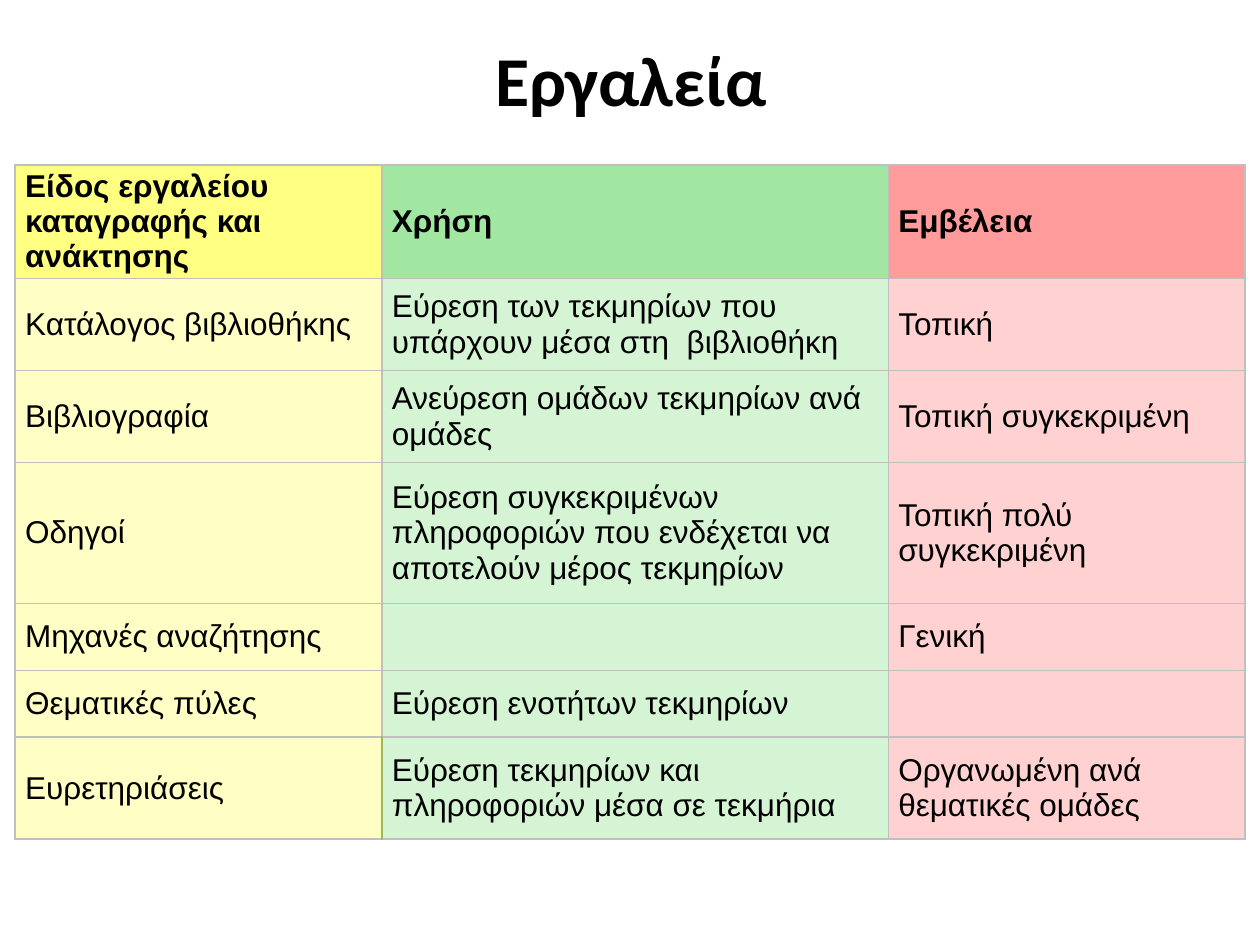
import pptx
import pptx.dml.color
import pptx.enum.text
import pptx.oxml
import pptx.oxml.ns
import pptx.util

MIDDLE = pptx.enum.text.MSO_ANCHOR.MIDDLE
CENTER = pptx.enum.text.PP_ALIGN.CENTER
LEFT = pptx.enum.text.PP_ALIGN.LEFT
GREY, OLIVE = "BFBFBF", "9BBB59"
HEADER_FILLS = ["FFFF81", "A1E7A1", "FF9B9B"]
BODY_FILLS = ["FFFFC5", "D4F4D4", "FFD1D1"]
COLUMN_WIDTHS = [2.91, 4.02, 2.83]
ROW_HEIGHTS = [0.73, 0.73, 0.73, 1.12, 0.53, 0.53, 0.81]
TOOLS = [
    ["Είδος εργαλείου καταγραφής και ανάκτησης", "Χρήση", "Εμβέλεια"],
    ["Κατάλογος βιβλιοθήκης", "Εύρεση των τεκμηρίων που υπάρχουν μέσα στη  βιβλιοθήκη", "Τοπική"],
    ["Βιβλιογραφία", "Ανεύρεση ομάδων τεκμηρίων ανά ομάδες", "Τοπική συγκεκριμένη"],
    ["Οδηγοί", "Εύρεση συγκεκριμένων πληροφοριών που ενδέχεται να αποτελούν μέρος τεκμηρίων",
     "Τοπική πολύ συγκεκριμένη"],
    ["Μηχανές αναζήτησης", "", "Γενική"],
    ["Θεματικές πύλες", "Εύρεση ενοτήτων τεκμηρίων", ""],
    ["Ευρετηριάσεις", "Εύρεση τεκμηρίων και πληροφοριών μέσα σε τεκμήρια", "Οργανωμένη ανά θεματικές ομάδες"],
]


def color(value):
    return pptx.dml.color.RGBColor.from_string(value)


def write(paragraph, text, alignment, **formats):
    paragraph.alignment = alignment
    if text:
        paragraph.add_run().text = text
    for font in [paragraph.font] + [run.font for run in paragraph.runs]:
        for name, value in formats.items():
            setattr(font, name, value)
        font.color.rgb = color("000000")


presentation = pptx.Presentation()
presentation.slide_width = pptx.util.Inches(10)
presentation.slide_height = pptx.util.Inches(7.5)
slide = presentation.slides.add_slide(presentation.slide_layouts[6])

title = slide.shapes.add_textbox(*map(pptx.util.Inches, (0.51, 0.13, 9, 0.99)))
title.text_frame.word_wrap = True
title.text_frame.vertical_anchor = MIDDLE
write(title.text_frame.paragraphs[0], "Εργαλεία", CENTER,
      name="Calibri", size=pptx.util.Pt(40), bold=True)

table = slide.shapes.add_table(
    len(ROW_HEIGHTS), len(COLUMN_WIDTHS),
    *map(pptx.util.Inches, (0.12, 1.31, sum(COLUMN_WIDTHS), sum(ROW_HEIGHTS)))).table
table.horz_banding = False
for column, width in zip(table.columns, COLUMN_WIDTHS):
    column.width = pptx.util.Inches(width)
for row, height in zip(table.rows, ROW_HEIGHTS):
    row.height = pptx.util.Inches(height)

cell_formats = {
    "vertical_anchor": MIDDLE,
    "margin_left": pptx.util.Inches(0.08),
    "margin_right": pptx.util.Inches(0.08),
    "margin_top": 0,
    "margin_bottom": 0,
}
last_row = len(TOOLS) - 1
for row_index, texts in enumerate(TOOLS):
    header = row_index == 0
    fills = HEADER_FILLS if header else BODY_FILLS
    for column_index, text in enumerate(texts):
        cell = table.cell(row_index, column_index)
        for name, value in cell_formats.items():
            setattr(cell, name, value)
        properties = cell._tc.get_or_add_tcPr()
        for side in "LRTB":
            accent = row_index == last_row and (column_index, side) in [(0, "R"), (1, "L")]
            properties.append(pptx.oxml.parse_xml(
                f'<a:ln{side} {pptx.oxml.ns.nsdecls("a")} w="12700"><a:solidFill>'
                f'<a:srgbClr val="{OLIVE if accent else GREY}"/></a:solidFill></a:ln{side}>'))
        cell.fill.solid()
        cell.fill.fore_color.rgb = color(fills[column_index])
        write(cell.text_frame.paragraphs[0], text, LEFT,
              name="Arial", size=pptx.util.Pt(18), bold=header)

presentation.save("out.pptx")
